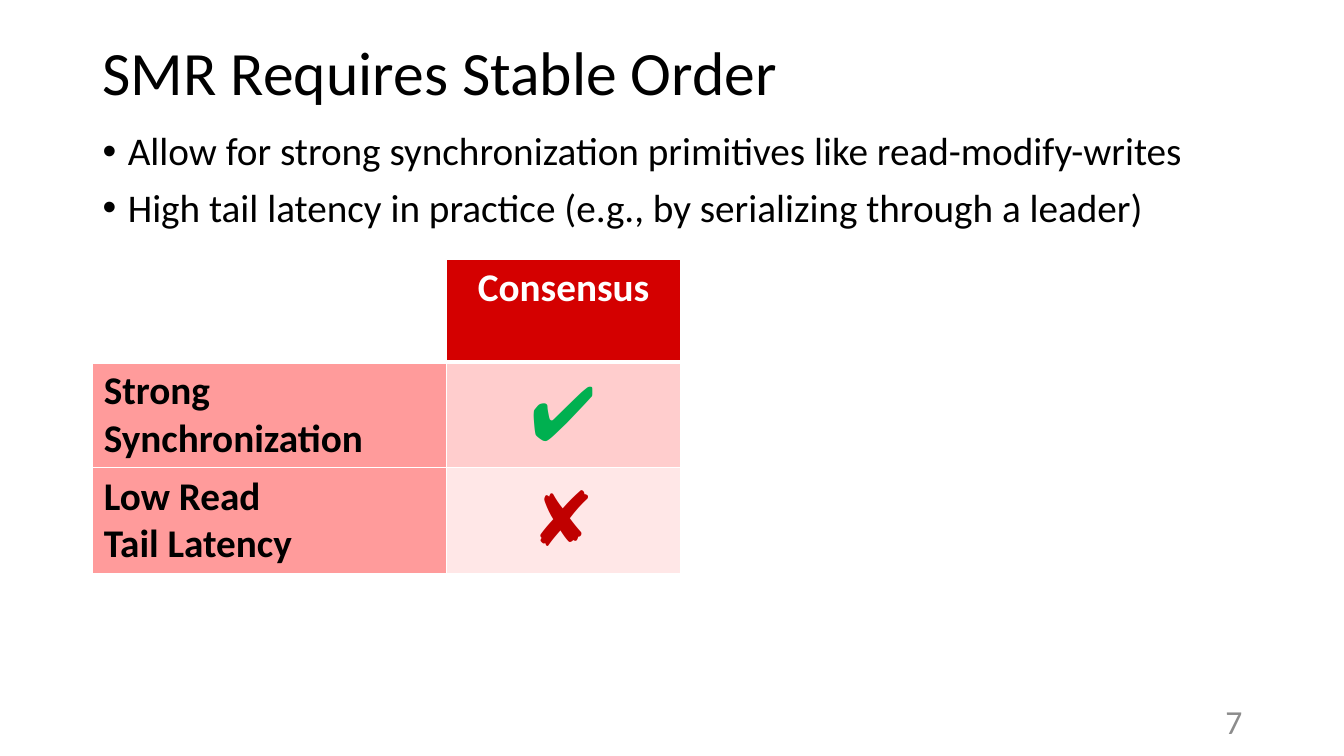
from lxml import etree
from pptx import Presentation
from pptx.dml.color import RGBColor
from pptx.enum import text
from pptx.oxml import ns
from pptx.util import Inches, Pt

FONT = "Calibri"
COLORS = {
    "black": "000000", "white": "FFFFFF", "gray": "8C8C8C",
    "header": "D40000", "label": "FF9B9B", "band_dark": "FFCDCD", "band_light": "FFE7E7",
    "yes": "00B050", "no": "C00000",
}
LEFT, CENTER, RIGHT = text.PP_ALIGN.LEFT, text.PP_ALIGN.CENTER, text.PP_ALIGN.RIGHT
TOP, MIDDLE = text.MSO_ANCHOR.TOP, text.MSO_ANCHOR.MIDDLE


def rgb(name):
    return RGBColor.from_string(COLORS[name])


def write(text_frame, wording, size, color, align=LEFT, bold=False):
    text_frame.text = wording
    for paragraph in text_frame.paragraphs:
        paragraph.alignment = align
        for run in paragraph.runs:
            run.font.name = FONT
            run.font.size = Pt(size)
            run.font.bold = bold
            run.font.color.rgb = rgb(color)


def add_text(slide, box, wording, size, color, align=LEFT, anchor=MIDDLE):
    shape = slide.shapes.add_textbox(*map(Inches, box))
    text_frame = shape.text_frame
    text_frame.word_wrap = True
    text_frame.vertical_anchor = anchor
    write(text_frame, wording, size, color, align)
    return text_frame


def add_title(slide, box, wording):
    text_frame = add_text(slide, box, wording, 44, "black")
    text_frame.paragraphs[0].line_spacing = 0.9


def add_bullets(slide, box, points):
    text_frame = add_text(slide, box, "\n".join(points), 28, "black", anchor=TOP)
    for paragraph in text_frame.paragraphs:
        paragraph.line_spacing = 0.9
        paragraph.space_before = Pt(10)
        properties = paragraph._p.get_or_add_pPr()
        properties.set("marL", str(Inches(0.25)))
        properties.set("indent", str(Inches(-0.25)))
        etree.SubElement(properties, ns.qn("a:buFont")).set("typeface", "Arial")
        etree.SubElement(properties, ns.qn("a:buChar")).set("char", "•")


def set_borders(cell, widths):
    properties = cell._tc.get_or_add_tcPr()
    for side, width in widths.items():
        line = etree.SubElement(properties, ns.qn(f"a:ln{side}"), w=str(Pt(width)))
        fill = etree.SubElement(line, ns.qn("a:solidFill"))
        etree.SubElement(fill, ns.qn("a:srgbClr"), val=COLORS["white"])


def add_comparison(slide, box, column_widths, row_heights, rows):
    frame = slide.shapes.add_table(len(rows), len(column_widths), *map(Inches, box))
    table = frame.table
    table.horz_banding = False
    for column, width in zip(table.columns, column_widths):
        column.width = Inches(width)
    for row, height in zip(table.rows, row_heights):
        row.height = Inches(height)

    for r, row in enumerate(rows):
        for c, (wording, size, color, fill) in enumerate(row):
            cell = table.cell(r, c)
            # A thick rule separates the header from the body
            set_borders(cell, {"L": 1, "R": 1, "T": 3 if r == 1 else 1, "B": 3 if r == 0 else 1})
            if fill:
                cell.fill.solid()
                cell.fill.fore_color.rgb = rgb(fill)
            else:
                cell.fill.background()
            is_mark = r > 0 and c > 0
            cell.margin_left = cell.margin_right = Inches(0.11)
            cell.margin_top = cell.margin_bottom = Inches(0.05)
            cell.vertical_anchor = MIDDLE if is_mark else TOP
            write(cell.text_frame, wording, size, color, CENTER if c else LEFT, not is_mark)


def main():
    presentation = Presentation()
    presentation.slide_width, presentation.slide_height = Inches(13.33), Inches(7.5)
    slide = presentation.slides.add_slide(presentation.slide_layouts[6])

    # Title and points
    add_title(slide, (0.92, 0.02, 11.5, 1.45), "SMR Requires Stable Order")
    add_bullets(slide, (0.92, 1.26, 11.5, 4.76), [
        "Allow for strong synchronization primitives like read-modify-writes",
        "High tail latency in practice (e.g., by serializing through a leader)",
    ])

    # Slide number
    add_text(slide, (9.42, 6.95, 3, 0.4), "7", 24, "gray", RIGHT)

    # Comparison table
    add_comparison(slide, (0.92, 2.57, 5.83, 3.12), (3.51, 2.32), (1.02, 1.05, 1.05), [
        [("", 28, "white", None), ("Consensus", 28, "white", "header")],
        [("Strong Synchronization", 28, "black", "label"), ("✔", 54, "yes", "band_dark")],
        [("Low Read\nTail Latency", 28, "black", "label"), ("✘", 54, "no", "band_light")],
    ])

    presentation.save("out.pptx")


if __name__ == "__main__":
    main()
